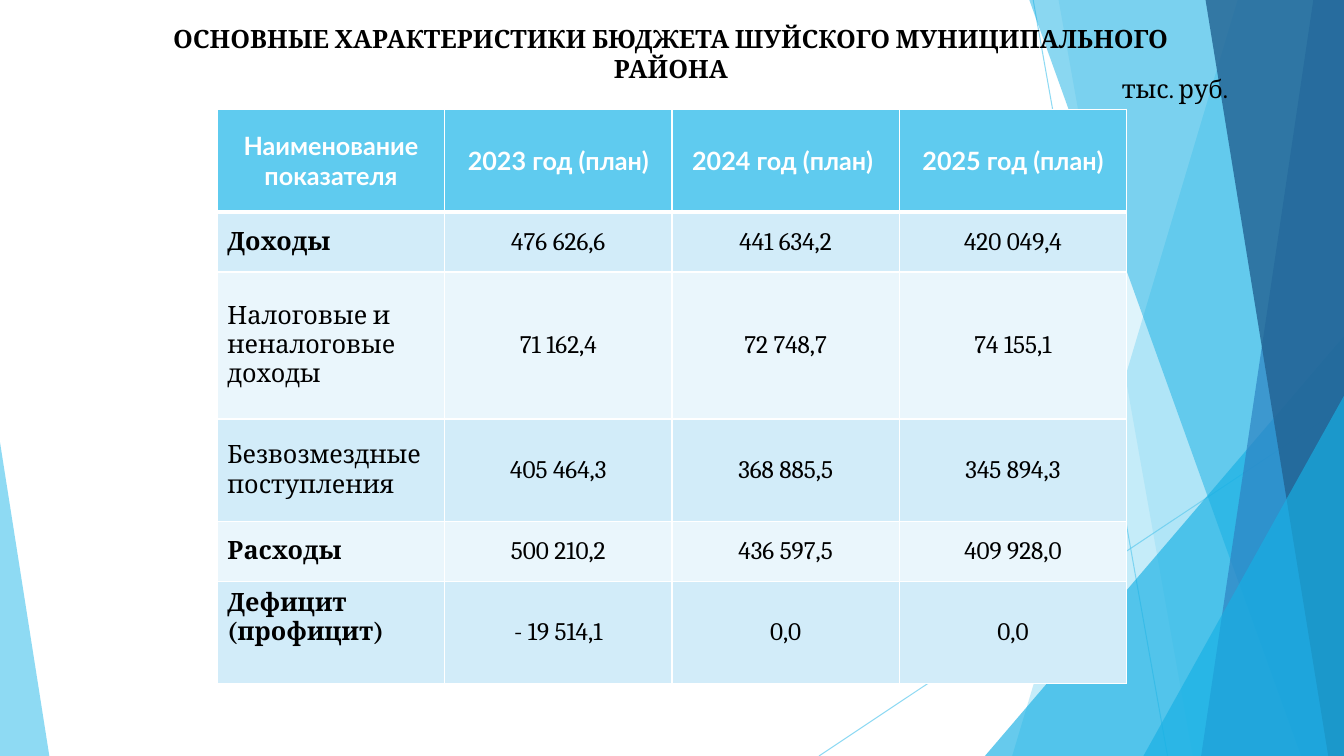
from lxml import etree
from pptx import Presentation
from pptx.dml.color import RGBColor
from pptx.enum.shapes import MSO_CONNECTOR, MSO_SHAPE
from pptx.enum.text import MSO_ANCHOR, MSO_AUTO_SIZE, PP_ALIGN
from pptx.oxml.ns import qn
from pptx.util import Pt

PX = 9525
WIDTH, HEIGHT = 1280, 720
TITLE_ONLY = 5
STRAIGHT = MSO_CONNECTOR.STRAIGHT
TRIANGLE = MSO_SHAPE.ISOSCELES_TRIANGLE
TOP, MIDDLE = MSO_ANCHOR.TOP, MSO_ANCHOR.MIDDLE
LEFT, CENTER = PP_ALIGN.LEFT, PP_ALIGN.CENTER
FIT_SHAPE = MSO_AUTO_SIZE.SHAPE_TO_FIT_TEXT

BLACK = RGBColor(0x00, 0x00, 0x00)
WHITE = RGBColor(0xFF, 0xFF, 0xFF)
SKY = RGBColor(0x5F, 0xCB, 0xEF)
CYAN = RGBColor(0x17, 0xB0, 0xE4)
BLUE = RGBColor(0x2E, 0x83, 0xC3)
NAVY = RGBColor(0x22, 0x62, 0x92)
BAND_DARK = RGBColor(0xD2, 0xEC, 0xF9)
BAND_LIGHT = RGBColor(0xEA, 0xF6, 0xFC)
SERIF, SANS = "Cambria", "Lato"

TITLE = "ОСНОВНЫЕ ХАРАКТЕРИСТИКИ БЮДЖЕТА ШУЙСКОГО МУНИЦИПАЛЬНОГО РАЙОНА"
UNIT = "тыс. руб."
BUDGET = [
    ("Наименование показателя", "2023 год (план)", "2024 год (план) ", "2025 год (план)"),
    ("Доходы", "476 626,6", "441 634,2", "420 049,4"),
    ("Налоговые и неналоговые доходы", "71 162,4", "72 748,7", "74 155,1"),
    ("Безвозмездные поступления", "405 464,3", "368 885,5", "345 894,3"),
    ("Расходы", "500 210,2", "436 597,5", "409 928,0"),
    ("Дефицит (профицит)", "- 19 514,1", "0,0", "0,0"),
]
ROW_HEIGHTS = [98, 57, 140, 98, 57, 97]
TOTALS = {"Доходы", "Расходы", "Дефицит (профицит)"}
DEFICIT_BOTTOM_MARGIN = 33


def emu(*lengths):
    """Turn px lengths into EMU."""
    return [length * PX for length in lengths]


def set_opacity(fill_parent, percent):
    """Make the solid colour inside an element partly transparent."""
    color = fill_parent.find(".//" + qn("a:srgbClr"))
    etree.SubElement(color, qn("a:alpha")).set("val", str(percent * 1000))


def paint(facet, color, opacity):
    """Give a facet a translucent fill without outline or shadow."""
    facet.shadow.inherit = False
    facet.fill.solid()
    facet.fill.fore_color.rgb = color
    facet.line.fill.background()
    set_opacity(facet.element.spPr, opacity)


def add_ray(shapes, start, end):
    """Draw one thin translucent line."""
    ray = shapes.add_connector(STRAIGHT, *emu(*start, *end))
    ray.line.color.rgb = SKY
    ray.line.width = Pt(0.75)
    set_opacity(ray.element.spPr, 70)
    etree.SubElement(ray.element.spPr, qn("a:effectLst"))


def add_sheet(shapes, top_x, bottom_left, bottom_right, color, opacity):
    """Draw a slanted sheet that reaches the right edge of the slide."""
    outline = shapes.build_freeform(top_x, -1, scale=PX)
    outline.add_line_segments([(WIDTH, -1), (WIDTH, HEIGHT), (bottom_right, HEIGHT),
                               (bottom_left, HEIGHT)])
    paint(outline.convert_to_shape(), color, opacity)


def add_corner(shapes, box, apex, color, opacity):
    """Draw a right triangle with its apex at the left (0) or right (1)."""
    corner = shapes.add_shape(TRIANGLE, *emu(*box))
    corner.adjustments[0] = apex
    paint(corner, color, opacity)


def add_backdrop(shapes):
    """Draw the faceted decoration from back to front."""
    add_ray(shapes, (984, 0), (1112, HEIGHT))
    add_ray(shapes, (WIDTH, 387), (780, HEIGHT))
    add_sheet(shapes, 1179, 964, WIDTH, SKY, 36)
    add_sheet(shapes, 1008, 1136, WIDTH, SKY, 20)
    add_corner(shapes, (938, 320, 342, 400), 1, CYAN, 66)
    add_sheet(shapes, 980, 1239, WIDTH, CYAN, 50)
    add_sheet(shapes, 1251, 1144, WIDTH, BLUE, 70)
    add_sheet(shapes, 1148, 1265, WIDTH, NAVY, 80)
    add_corner(shapes, (1089, 377, 191, 343), 1, CYAN, 66)
    add_corner(shapes, (0, 421, 47, 299), 0, SKY, 70)


def write(frame, text, align, font=SERIF, color=BLACK, bold=False):
    """Put one formatted run into a text frame."""
    paragraph = frame.paragraphs[0]
    paragraph.alignment = align
    run = paragraph.add_run()
    run.text = text
    run.font.size = Pt(18)
    run.font.name = font
    run.font.bold = bold
    run.font.color.rgb = color


def add_borders(cell, top, bottom):
    """Outline a cell in white with the given top and bottom widths in points."""
    properties = cell._tc.get_or_add_tcPr()
    for side, width in (("L", 1), ("R", 1), ("T", top), ("B", bottom)):
        border = etree.SubElement(properties, qn("a:ln" + side), w=str(Pt(width)))
        solid = etree.SubElement(border, qn("a:solidFill"))
        etree.SubElement(solid, qn("a:srgbClr"), val=str(WHITE))


def add_budget_table(shapes, box):
    """Build the budget table in the given box."""
    table = shapes.add_table(len(BUDGET), len(BUDGET[0]), *emu(*box)).table
    table.horz_banding = False
    for column in table.columns:
        column.width = box[2] * PX // len(BUDGET[0])
    for row, (height, texts) in enumerate(zip(ROW_HEIGHTS, BUDGET)):
        table.rows[row].height = height * PX
        for col, text in enumerate(texts):
            cell = table.cell(row, col)
            cell.vertical_anchor = MIDDLE
            add_borders(cell, 3 if row == 1 else 1, 3 if row == 0 else 1)
            cell.fill.solid()
            if row == 0:
                cell.fill.fore_color.rgb = SKY
                write(cell.text_frame, text, CENTER, SANS, WHITE, True)
            else:
                cell.fill.fore_color.rgb = BAND_DARK if row % 2 else BAND_LIGHT
                write(cell.text_frame, text, CENTER if col else LEFT, bold=text in TOTALS)
    table.cell(len(BUDGET) - 1, 0).margin_bottom = DEFICIT_BOTTOM_MARGIN * PX


def place_title(slide, box):
    """Format the title placeholder and bring it in front of the backdrop."""
    title = slide.shapes.title
    title.left, title.top, title.width, title.height = emu(*box)
    title.text_frame.word_wrap = True
    title.text_frame.vertical_anchor = TOP
    title.text_frame.auto_size = FIT_SHAPE
    write(title.text_frame, TITLE, CENTER, bold=True)
    slide.shapes.element.append(title.element)


def add_unit(shapes, box):
    """Add the unit of measure above the table."""
    frame = shapes.add_textbox(*emu(*box)).text_frame
    frame.word_wrap = True
    frame.auto_size = FIT_SHAPE
    write(frame, UNIT, LEFT)


def main():
    """Build the budget slide and save it."""
    deck = Presentation()
    deck.slide_width, deck.slide_height = emu(WIDTH, HEIGHT)
    slide = deck.slides.add_slide(deck.slide_layouts[TITLE_ONLY])
    add_backdrop(slide.shapes)
    add_budget_table(slide.shapes, (207, 104, 866, sum(ROW_HEIGHTS)))
    place_title(slide, (138, 17, 1002, 68))
    add_unit(slide.shapes, (1059, 65, 149, 38))
    deck.save("out.pptx")


if __name__ == "__main__":
    main()
